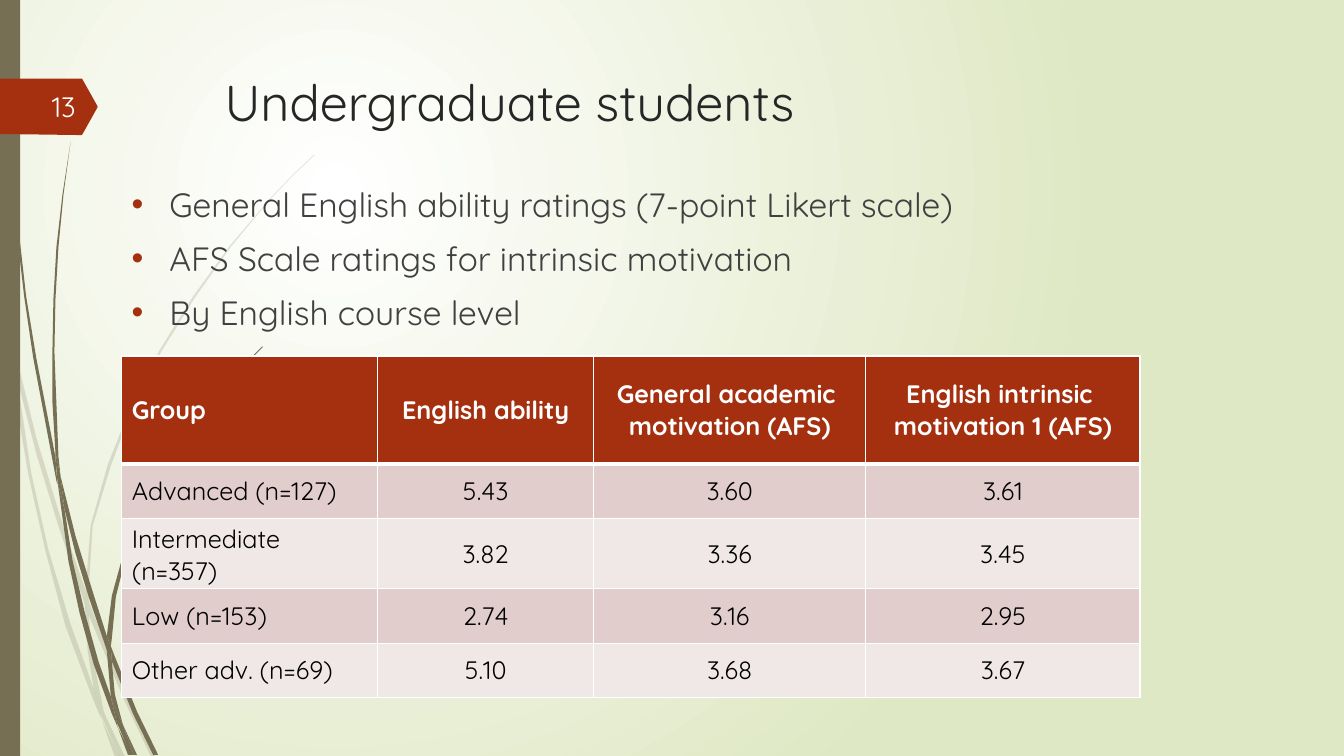
from lxml import etree
from pptx import Presentation
from pptx.dml.color import RGBColor
from pptx.enum.shapes import MSO_SHAPE
from pptx.enum.text import MSO_ANCHOR, PP_ALIGN
from pptx.oxml import parse_xml
from pptx.oxml.ns import nsdecls, qn
from pptx.util import Cm, Pt

RECT = MSO_SHAPE.RECTANGLE
TOP, MIDDLE = MSO_ANCHOR.TOP, MSO_ANCHOR.MIDDLE
LEFT, CENTER, RIGHT = PP_ALIGN.LEFT, PP_ALIGN.CENTER, PP_ALIGN.RIGHT

FONT = "Quicksand"
COLORS = {
    "olive": "766F54", "rust": "A53010", "title": "262626", "body": "404040",
    "number": "FEFFFF", "white": "FFFFFF", "black": "000000",
    "band_dark": "E1CDCC", "band_light": "F0E8E7", "meadow": "DFE8C4",
}
UNIT = Cm(2.54) / 100  # outline points are in hundredths of an inch

FAINT_STEMS = [
    [(11, 350), (9, 322), (0, 282), (0, 299), (10, 344)],
    [(58, 522), (84, 599), (85, 586), (62, 520), (36, 434), (14, 345), (17, 376), (36, 450)],
    [(92, 607), (88, 596), (88, 610), (123, 694), (150, 751), (155, 751), (127, 692)],
    [(119, 751), (124, 751), (105, 711)],
    [(93, 683), (70, 619), (48, 545), (31, 469), (17, 376), (11, 350), (18, 411), (28, 470),
     (45, 546), (65, 621), (92, 693), (101, 714), (99, 707)],
    [(84, 599), (87, 646), (93, 683), (96, 692), (105, 711), (103, 706), (91, 646), (88, 608)],
    [(88, 584), (92, 522), (110, 462), (132, 404), (160, 349), (193, 296), (229, 245),
     (268, 198), (290, 175), (312, 154), (312, 153), (289, 175), (268, 197), (228, 244),
     (191, 295), (158, 348), (130, 403), (107, 461), (90, 521), (85, 584), (85, 586), (88, 596)],
    [(101, 714), (114, 751), (119, 751)],
    [(88, 608), (88, 596), (85, 586), (84, 599)],
    [(96, 692), (93, 683), (99, 707), (119, 751), (105, 711)],
]
SOLID_STEMS = [
    [(7, 110), (17, 233), (24, 294), (33, 355), (56, 477), (57, 481), (55, 453), (36, 355),
     (26, 294), (19, 232), (12, 171), (8, 109), (5, 48), (4, 0), (3, 0), (4, 48)],
    [(88, 592), (106, 645), (106, 631), (93, 590), (75, 532), (60, 472), (64, 505), (75, 549)],
    [(113, 649), (110, 641), (111, 656), (132, 708), (152, 749), (157, 749), (136, 706)],
    [(110, 691), (98, 657), (84, 607), (72, 556), (64, 505), (57, 477), (68, 557), (79, 608),
     (93, 659), (111, 708), (117, 722), (116, 717)],
    [(60, 472), (58, 453), (54, 349), (55, 297), (58, 245), (63, 193), (70, 141), (62, 193),
     (56, 245), (53, 297), (52, 349), (52, 399), (55, 449)],
    [(133, 749), (136, 749), (122, 719)],
    [(57, 477), (64, 505), (60, 472), (55, 449), (55, 453)],
    [(111, 633), (115, 592), (125, 552), (140, 513), (158, 476), (180, 440), (205, 406),
     (231, 374), (261, 344), (260, 344), (231, 373), (204, 405), (178, 439), (156, 474),
     (137, 512), (122, 551), (111, 591), (106, 631), (110, 641)],
    [(117, 722), (127, 749), (131, 749)],
    [(106, 645), (110, 691), (116, 706), (122, 719), (114, 689), (111, 656)],
    [(106, 645), (111, 656), (110, 641), (106, 631)],
    [(116, 706), (110, 691), (116, 717), (130, 749), (133, 749), (122, 719)],
]
NUMBER_TAG = [(96, 108), (82, 133), (81, 134), (76, 134), (0, 133), (0, 78), (81, 78),
              (82, 79), (96, 104), (97, 106)]

TABLE_ROWS = [
    ["Group", "English ability", "General academic \vmotivation (AFS)",
     "English intrinsic \vmotivation 1 (AFS)"],
    ["Advanced (n=127)", "5.43", "3.60", "3.61"],
    ["Intermediate (n=357)", "3.82", "3.36", "3.45"],
    ["Low (n=153)", "2.74", "3.16", "2.95"],
    ["Other adv. (n=69)", "5.10", "3.68", "3.67"],
]


def rgb(name):
    return RGBColor.from_string(COLORS[name])


class SlideBuilder:
    def __init__(self, slide, font):
        self.s, self.font = slide, font

    def background(self, inner, outer):
        """Fill the slide with a round gradient centred in its upper left."""
        fill = self.s.background.fill
        fill.gradient()
        for stop, name in zip(fill.gradient_stops, (inner, outer)):
            stop.color.rgb = rgb(name)
        grad = self.s.element.xpath(".//a:gradFill")[0]
        grad.remove(grad.find(qn("a:lin")))
        grad.append(parse_xml(
            f'<a:path {nsdecls("a")} path="circle">'
            '<a:fillToRect l="50000" t="50000" r="100000" b="100000"/></a:path>'))

    def paint(self, sp, color, opacity=100):
        sp.shadow.inherit = False
        sp.fill.solid()
        sp.fill.fore_color.rgb = rgb(color)
        sp.line.fill.background()
        if opacity < 100:
            clr = sp.element.spPr.find(qn("a:solidFill"))[0]
            etree.SubElement(clr, qn("a:alpha"), val=str(opacity * 1000))

    def rect(self, box, color):
        self.paint(self.s.shapes.add_shape(RECT, *map(Cm, box)), color)

    def outline(self, points, color, opacity=100):
        builder = self.s.shapes.build_freeform(*points[0], scale=UNIT)
        builder.add_line_segments(points[1:], close=True)
        self.paint(builder.convert_to_shape(), color, opacity)

    def paragraph(self, p, text, size, color, align=LEFT, bold=False):
        p.text, p.alignment = text, align
        fmt = {"name": self.font, "size": Pt(size), "bold": bold}
        for r in p.runs:
            for key, value in fmt.items():
                setattr(r.font, key, value)
            r.font.color.rgb = rgb(color)

    def text(self, box, lines, size, color, align=LEFT, anchor=TOP, bullet=None):
        tf = self.s.shapes.add_textbox(*map(Cm, box)).text_frame
        tf.word_wrap, tf.vertical_anchor = True, anchor
        for i, line in enumerate(lines):
            p = tf.add_paragraph() if i else tf.paragraphs[0]
            self.paragraph(p, line, size, color, align)
            if bullet:
                p.space_before = Pt(10)
                self.bullet(p, bullet)

    def bullet(self, p, color):
        pPr = p._p.get_or_add_pPr()
        indent = Cm(0.95)
        pPr.set("marL", str(indent))
        pPr.set("indent", str(-indent))
        clr = etree.SubElement(pPr, qn("a:buClr"))
        etree.SubElement(clr, qn("a:srgbClr"), val=COLORS[color])
        etree.SubElement(pPr, qn("a:buFont"), typeface="Arial")
        etree.SubElement(pPr, qn("a:buChar"), char="•")

    def borders(self, cell, color, widths):
        """Draw the left, right, top and bottom borders, widths in points."""
        tcPr = cell._tc.get_or_add_tcPr()
        for i, (side, width) in enumerate(zip("LRTB", widths)):
            tcPr.insert(i, parse_xml(
                f'<a:ln{side} {nsdecls("a")} w="{Pt(width)}"><a:solidFill>'
                f'<a:srgbClr val="{COLORS[color]}"/></a:solidFill></a:ln{side}>'))

    def table(self, left, top, widths, heights, rows):
        frame = self.s.shapes.add_table(
            len(rows), len(widths), Cm(left), Cm(top), Cm(sum(widths)), Cm(sum(heights)))
        tbl = frame.table
        for col, width in zip(tbl.columns, widths):
            col.width = Cm(width)
        for i, (row, height) in enumerate(zip(rows, heights)):
            tbl.rows[i].height = Cm(height)
            head = i == 0
            fill = "rust" if head else "band_dark" if i % 2 else "band_light"
            for j, value in enumerate(row):
                cell = tbl.cell(i, j)
                cell.vertical_anchor = MIDDLE
                cell.fill.solid()
                cell.fill.fore_color.rgb = rgb(fill)
                self.borders(cell, "white", (1, 1, 3 if i == 1 else 1, 3 if head else 1))
                self.paragraph(cell.text_frame.paragraphs[0], value, 18,
                               "white" if head else "black", CENTER if j else LEFT, head)


def main():
    prs = Presentation()
    prs.slide_width, prs.slide_height = Cm(33.87), Cm(19.05)
    sb = SlideBuilder(prs.slides.add_slide(prs.slide_layouts[6]), FONT)
    sb.background("white", "meadow")
    for stems, opacity in ((FAINT_STEMS, 20), (SOLID_STEMS, 100)):
        for stem in stems:
            sb.outline(stem, "olive", opacity)
    sb.rect((0, 0, 0.51, 19.05), "olive")
    sb.outline(NUMBER_TAG, "rust")
    sb.text((5.41, 1.68, 24.77, 3.56), ["Undergraduate students"], 36, "title")
    sb.text((3.07, 4.5, 27.74, 12.65),
            ["General English ability ratings (7-point Likert scale)",
             "AFS Scale ratings for intrinsic motivation",
             "By English course level"], 24, "body", bullet="rust")
    sb.text((0, 2.18, 2.16, 1.02), ["13"], 20, "number", RIGHT, MIDDLE)
    sb.table(3.07, 8.97, (6.45, 5.44, 6.86, 6.91), (2.72, *[1.37] * 4), TABLE_ROWS)
    prs.save("out.pptx")


if __name__ == "__main__":
    main()
